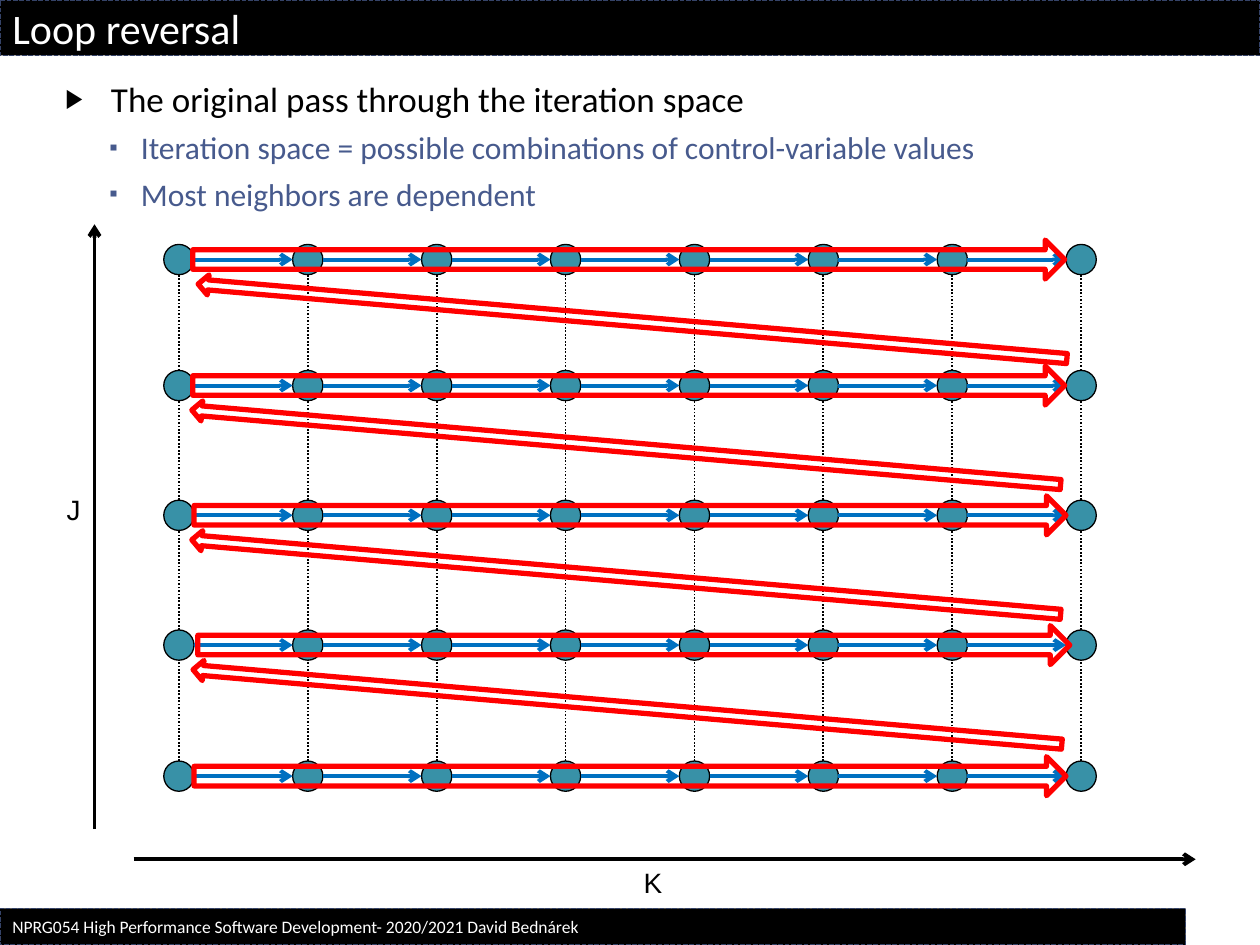
from lxml import etree
from pptx import Presentation, util as u
from pptx.dml.color import RGBColor
from pptx.enum import dml, shapes, text
from pptx.oxml import ns

# Content
TITLE = "Loop reversal"
FOOTER = "NPRG054 High Performance Software Development- 2020/2021 David Bednárek"
BULLETS = [  # level, text
    (0, " The original pass through the iteration space"),
    (1, "Iteration space = possible combinations of control-variable values"),
    (1, "Most neighbors are dependent"),
]
LEVELS = [  # left margin, hanging indent, bullet, size, colour
    (0.6, 0.3, "▶", 20, "black"),
    (0.9, 0.25, "▪", 18, "slate"),
]
AXES = [  # label, label box, from, to
    ("K", (5.01, 6.82, 0.35, 0.37), (1.06, 6.82), (9.49, 6.82)),
    ("J", (0.43, 3.86, 0.31, 0.37), (0.75, 6.58), (0.75, 1.78)),
]
ROWS = [  # centre of row, left of forward pass, left of return pass
    (2.06, 1.53, 1.56),
    (3.06, 1.53, 1.51),
    (4.09, 1.54, 1.51),
    (5.12, 1.57, 1.52),
    (6.16, 1.54, None),
]
COLORS = {"black": "000000", "white": "FFFFFF", "slate": "475A8D", "navy": "354368",
          "teal": "3891A7", "blue": "0070C0", "red": "FF0000"}

# Grid
W, H = 10, 7.5
COLS, FIRST_X, PITCH = 8, 1.42, 1.023
NODE = 0.24
PASS_W, PASS_H, RETURN_H = 6.92, 0.31, 0.16
RETURN_DROP, RETURN_ANGLE = 0.49, 184.9


def rgb(name):
    return RGBColor.from_string(COLORS[name])


def style_line(line, color, width, dash=None):
    line.color.rgb = rgb(color)
    line.width = u.Pt(width)
    if dash:
        line.dash_style = dash


def add_shape(parent, kind, box, fill, line, width, dash=None):
    sp = parent.add_shape(kind, *map(u.Inches, box))
    sp.shadow.inherit = False
    if fill:
        sp.fill.solid()
        sp.fill.fore_color.rgb = rgb(fill)
    else:
        sp.fill.background()
    style_line(sp.line, line, width, dash)
    return sp


def add_line(parent, start, end, color, width, dash=None, arrow=False):
    c = parent.add_connector(shapes.MSO_CONNECTOR.STRAIGHT, *map(u.Inches, start + end))
    style_line(c.line, color, width, dash)
    if arrow:
        etree.SubElement(c.line._get_or_add_ln(), ns.qn("a:tailEnd"), type="arrow")
    etree.SubElement(c._element.spPr, ns.qn("a:effectLst"))


def set_font(p, name, size, color):
    p.font.name, p.font.size, p.font.color.rgb = name, u.Pt(size), rgb(color)


def add_bar(parent, box, words, size):
    sp = add_shape(parent, shapes.MSO_SHAPE.RECTANGLE, box, "black", "navy", 0.9,
                   dml.MSO_LINE.SQUARE_DOT)
    tf = sp.text_frame
    tf.vertical_anchor = text.MSO_ANCHOR.MIDDLE
    p = tf.paragraphs[0]
    p.text, p.alignment = words, text.PP_ALIGN.LEFT
    set_font(p, "Calibri", size, "white")


def add_bullets(parent, box):
    tf = parent.add_textbox(*map(u.Inches, box)).text_frame
    tf.word_wrap = True
    tf.vertical_anchor = text.MSO_ANCHOR.MIDDLE
    for i, (level, words) in enumerate(BULLETS):
        margin, hang, mark, size, color = LEVELS[level]
        p = tf.add_paragraph() if i else tf.paragraphs[0]
        p.text, p.level, p.space_before = words, level, u.Pt(5)
        set_font(p, "Calibri", size, color)
        pPr = p._p.get_or_add_pPr()
        pPr.set("marL", str(u.Inches(margin)))
        pPr.set("indent", str(-u.Inches(hang)))
        extras = [etree.Element(ns.qn("a:" + tag)) for tag in ("buClr", "buSzPct", "buFont", "buChar")]
        etree.SubElement(extras[0], ns.qn("a:srgbClr"), val=COLORS[color])
        extras[1].set("val", "76000")
        extras[2].set("typeface", "Arial")
        extras[3].set("char", mark)
        at = list(pPr).index(pPr.find(ns.qn("a:defRPr")))
        pPr[at:at] = extras


def add_iteration_space(parent):
    xs = [FIRST_X + PITCH * i for i in range(COLS)]
    ys = [row[0] for row in ROWS]
    r = NODE / 2
    # Dotted columns
    for x in xs:
        for y, below in zip(ys, ys[1:]):
            add_line(parent, (x, below - r), (x, y + r), "black", 1, dml.MSO_LINE.ROUND_DOT)
    # Nodes joined by steps
    for y in ys:
        for x in xs:
            add_shape(parent, shapes.MSO_SHAPE.OVAL, (x - r, y - r, NODE, NODE),
                      "teal", "black", 0.75)
        for x, after in zip(xs, xs[1:]):
            add_line(parent, (x + r, y), (after - r, y), "blue", 2.25, arrow=True)
    # Axes
    for label, box, start, end in AXES:
        add_line(parent, start, end, "black", 2.25, arrow=True)
        tf = parent.add_textbox(*map(u.Inches, box)).text_frame
        tf.word_wrap = False
        p = tf.paragraphs[0]
        p.text = label
        set_font(p, "Arial", 16, "black")


def add_passes(parent):
    arrow = shapes.MSO_SHAPE.RIGHT_ARROW
    for y, forward_x, return_x in ROWS:
        add_shape(parent, arrow, (forward_x, y - PASS_H / 2, PASS_W, PASS_H), None, "red", 3)
        if return_x:
            top = y + RETURN_DROP - RETURN_H / 2
            sp = add_shape(parent, arrow, (return_x, top, PASS_W, RETURN_H), None, "red", 3)
            sp.rotation = RETURN_ANGLE


def main():
    prs = Presentation()
    prs.slide_width, prs.slide_height = u.Inches(W), u.Inches(H)
    s = prs.slides.add_slide(prs.slide_layouts[6])
    add_bar(s.shapes, (0, 0, W, 0.44), TITLE, 24)
    add_bullets(s.shapes, (0.12, 0.6, W - 0.24, 1.1))
    add_iteration_space(s.shapes.add_group_shape().shapes)
    add_passes(s.shapes.add_group_shape().shapes)
    add_bar(s.shapes, (0, H - 0.29, 9.41, 0.29), FOOTER, 10)
    prs.save("out.pptx")


if __name__ == "__main__":
    main()
